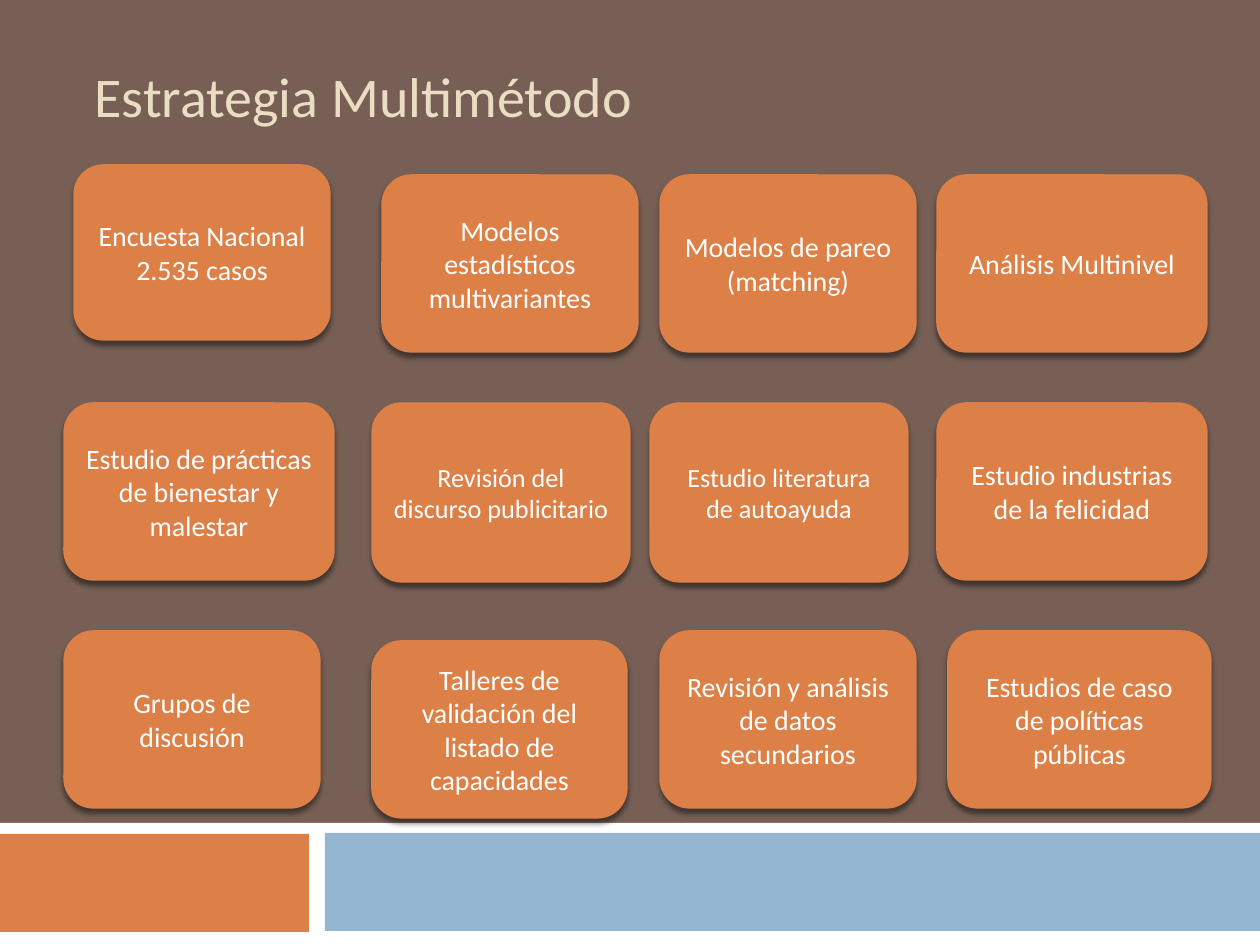
import pptx
import pptx.util
import pptx.dml.color
import pptx.enum.shapes
import pptx.enum.text
import pptx.oxml
import pptx.oxml.ns

TITLE = ("Estrategia Multimétodo", (82, 16, 1134, 158))
BANDS = [
    ("white", (0, 823, 1260, 122)),
    ("orange", (0, 834, 309, 98)),
    ("blue", (325, 833, 935, 98)),
]
CARDS = [
    (["Encuesta Nacional", "2.535 casos"], (74, 165, 256, 175), "card"),
    (["Modelos estadísticos multivariantes"], (382, 175, 256, 177), "card"),
    (["Modelos de pareo (matching)"], (660, 175, 256, 177), "card"),
    (["Análisis Multinivel"], (937, 175, 270, 177), "card"),
    (["Estudio de prácticas de bienestar y malestar"], (64, 403, 270, 177), "card"),
    (["Revisión del discurso publicitario"], (372, 403, 258, 179), "small"),
    (["Estudio literatura de autoayuda"], (650, 403, 258, 179), "small"),
    (["Estudio industrias de la felicidad"], (937, 403, 270, 177), "card"),
    (["Grupos de discusión"], (64, 631, 256, 177), "card"),
    (["Talleres de validación del listado de capacidades"], (372, 641, 255, 177), "card"),
    (["Revisión y análisis de datos secundarios"], (660, 631, 256, 177), "card"),
    (["Estudios de caso", "de políticas públicas"], (948, 631, 263, 177), "card"),
]
THEME = {
    "font": "Calibri",
    "colors": {"brown": "775F55", "white": "FFFFFF", "orange": "DD8047",
               "blue": "94B6D2", "cream": "EBDDC3"},
    "sizes": {"title": 32, "card": 16, "small": 15},
    "line": 0.79,
    "shadow": {"blur": 3, "dist": 2.4, "angle": 90, "alpha": 45},
}
PX = 914400 // 126
SHAPE = pptx.enum.shapes.MSO_SHAPE
ALIGN = pptx.enum.text.PP_ALIGN


def color(name):
    return pptx.dml.color.RGBColor.from_string(THEME["colors"][name])


def emu(box):
    return [v * PX for v in box]


def add_block(s, kind, box, fill):
    sp = s.shapes.add_shape(kind, *emu(box))
    sp.shadow.inherit = False
    sp.fill.solid()
    sp.fill.fore_color.rgb = color(fill)
    sp.line.fill.background()
    return sp


def add_shadow(sp):
    sh = THEME["shadow"]
    effects = sp._element.spPr.find(pptx.oxml.ns.qn("a:effectLst"))
    effects.append(pptx.oxml.parse_xml(
        f'<a:outerShdw {pptx.oxml.ns.nsdecls("a")} blurRad="{round(sh["blur"] * 12700)}" '
        f'dist="{round(sh["dist"] * 12700)}" dir="{sh["angle"] * 60000}" '
        f'algn="ctr" rotWithShape="0"><a:srgbClr val="000000">'
        f'<a:alpha val="{sh["alpha"] * 1000}"/></a:srgbClr></a:outerShdw>'))


def write(sp, lines, size, ink, align):
    tf = sp.text_frame
    tf.word_wrap = True
    tf.vertical_anchor = pptx.enum.text.MSO_ANCHOR.MIDDLE
    form = {"name": THEME["font"], "size": pptx.util.Pt(THEME["sizes"][size])}
    for i, line in enumerate(lines):
        p = tf.add_paragraph() if i else tf.paragraphs[0]
        p.alignment = align
        r = p.add_run()
        r.text = line
        for key, value in form.items():
            setattr(r.font, key, value)
        r.font.color.rgb = color(ink)


def main():
    prs = pptx.Presentation()
    prs.slide_width, prs.slide_height = emu((1260, 945))
    s = prs.slides.add_slide(prs.slide_layouts[6])
    s.background.fill.solid()
    s.background.fill.fore_color.rgb = color("brown")

    for fill, box in BANDS:
        add_block(s, SHAPE.RECTANGLE, box, fill)

    title, box = TITLE
    write(s.shapes.add_textbox(*emu(box)), [title], "title", "cream", ALIGN.LEFT)

    for lines, box, size in CARDS:
        sp = add_block(s, SHAPE.ROUNDED_RECTANGLE, box, "orange")
        sp.line.color.rgb = color("orange")
        sp.line.width = pptx.util.Pt(THEME["line"])
        add_shadow(sp)
        write(sp, lines, size, "white", ALIGN.CENTER)

    prs.save("out.pptx")


if __name__ == "__main__":
    main()
